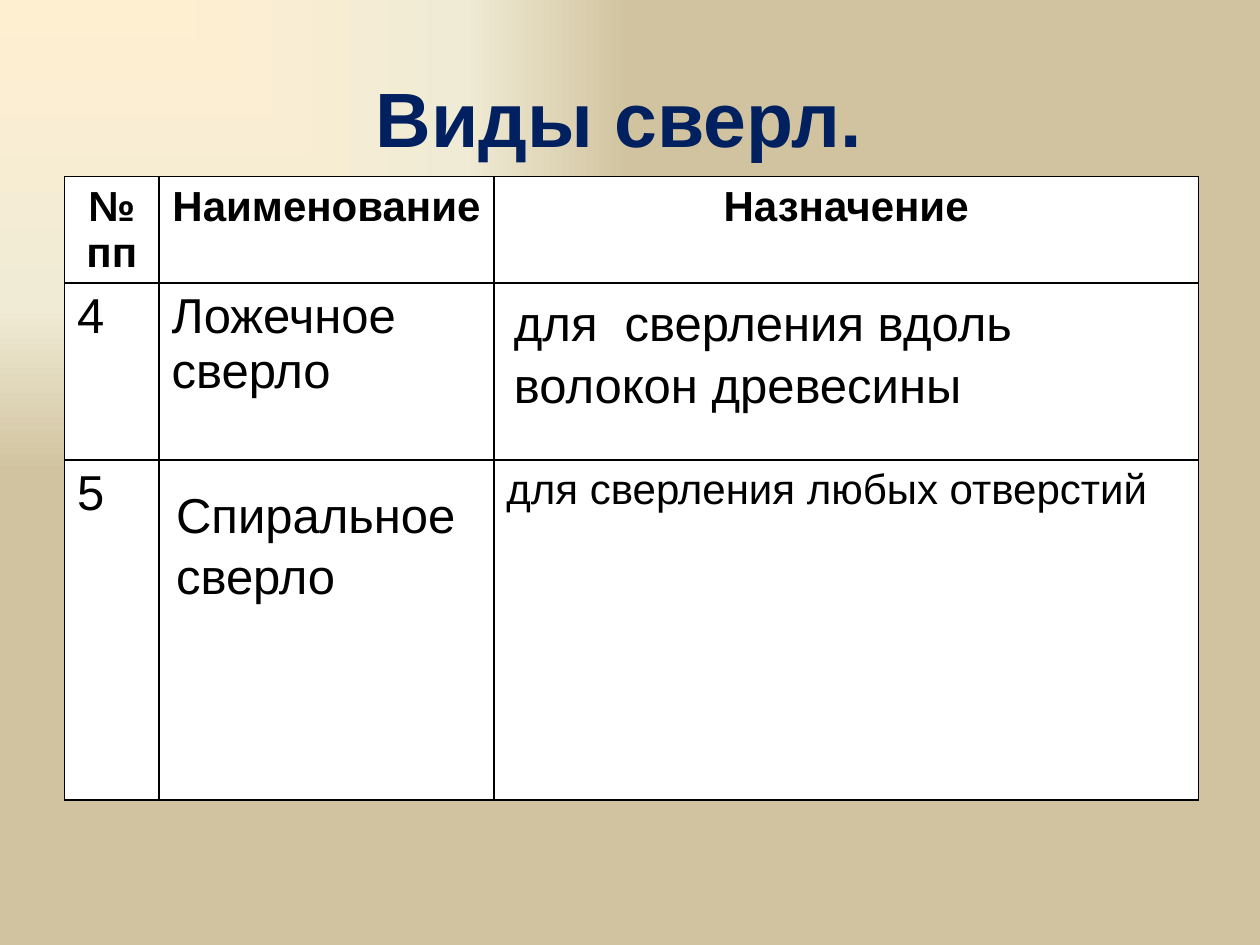
from dataclasses import dataclass, field

from lxml import etree
from pptx import Presentation
from pptx import util as u
from pptx.dml.color import RGBColor
from pptx.enum import text
from pptx.oxml import ns

COLORS = {
    "ink": "000000",
    "title": "002060",
    "cell": "FFFFFF",
    "cream": "FFEFD1",
    "ivory": "F0EBD5",
    "sand": "D1C39F",
}


def write_text(frame, content, size=28, color="ink", bold=False,
               align=text.PP_ALIGN.LEFT, spacing=1.0, font="Arial"):
    frame.word_wrap = True
    for index, line in enumerate(content.split("\n")):
        para = frame.add_paragraph() if index else frame.paragraphs[0]
        para.alignment = align
        para.line_spacing = spacing
        span = para.add_run()
        span.text = line
        span.font.name = font
        span.font.size = u.Pt(size)
        span.font.bold = bold
        span.font.color.rgb = RGBColor.from_string(COLORS[color])


def add_node(parent, tag, **attributes):
    return etree.SubElement(parent, ns.qn(tag), attributes)


@dataclass
class SlideBuilder:
    page: object
    colors: dict = field(default_factory=lambda: COLORS)
    border_width: float = 1

    def background(self, stops):
        self.page.background.fill.gradient()
        gradient = self.page.element.find(".//" + ns.qn("a:gradFill"))
        for child in list(gradient):
            gradient.remove(child)
        stop_list = add_node(gradient, "a:gsLst")
        for percent, color in stops:
            stop = add_node(stop_list, "a:gs", pos=str(percent * 1000))
            add_node(stop, "a:srgbClr", val=self.colors[color])
        shade = add_node(gradient, "a:path", path="rect")
        add_node(shade, "a:fillToRect", r="100000", b="100000")

    def title(self, content, left, top, width, height):
        box = self.page.shapes.title
        box.left, box.top = u.Pt(left), u.Pt(top)
        box.width, box.height = u.Pt(width), u.Pt(height)
        box.text_frame.vertical_anchor = text.MSO_ANCHOR.MIDDLE
        write_text(box.text_frame, content, size=44, color="title", bold=True,
                   align=text.PP_ALIGN.CENTER)

    def label(self, content, left, top, width, height):
        box = self.page.shapes.add_textbox(
            u.Pt(left), u.Pt(top), u.Pt(width), u.Pt(height))
        write_text(box.text_frame, content, spacing=1.05)

    def borders(self, cell):
        properties = cell._tc.get_or_add_tcPr()
        for index, side in enumerate(("a:lnL", "a:lnR", "a:lnT", "a:lnB")):
            line = etree.Element(ns.qn(side), w=str(u.Pt(self.border_width)))
            fill = add_node(line, "a:solidFill")
            add_node(fill, "a:srgbClr", val=self.colors["ink"])
            properties.insert(index, line)

    def table(self, rows, left, top, widths, heights):
        table = self.page.shapes.add_table(
            len(rows), len(widths), u.Pt(left), u.Pt(top),
            u.Pt(sum(widths)), u.Pt(sum(heights))).table
        table.horz_banding = False
        for column, width in zip(table.columns, widths):
            column.width = u.Pt(width)
        for row, height, entries in zip(table.rows, heights, rows):
            row.height = u.Pt(height)
            for cell, (content, style) in zip(row.cells, entries):
                cell.fill.solid()
                cell.fill.fore_color.rgb = RGBColor.from_string(self.colors["cell"])
                self.borders(cell)
                if content:
                    write_text(cell.text_frame, content, **style)


def main():
    deck = Presentation()
    deck.slide_width, deck.slide_height = u.Pt(720), u.Pt(540)
    builder = SlideBuilder(deck.slides.add_slide(deck.slide_layouts[5]))

    header = dict(size=24, bold=True, align=text.PP_ALIGN.CENTER)
    body = dict(size=28)
    rows = [
        [("№\nпп", header), ("Наименование ", header), ("Назначение", header)],
        [("4", body), ("Ложечное сверло", body), ("", body)],
        [("5", body), ("", body), ("для сверления любых отверстий", dict(size=24))],
    ]

    builder.background([(0, "cream"), (65, "ivory"), (100, "sand")])
    builder.table(rows, 36.9, 101, widths=[54, 191.3, 402.7],
                  heights=[60.7, 101, 194.5])
    builder.title("Виды сверл. ", 36, 21.6, 648, 90)
    builder.label("для  сверления вдоль волокон древесины", 286.6, 162, 365.8, 75)
    builder.label("Спиральное сверло", 93.6, 271.4, 182.9, 75)
    deck.save("out.pptx")


if __name__ == "__main__":
    main()
